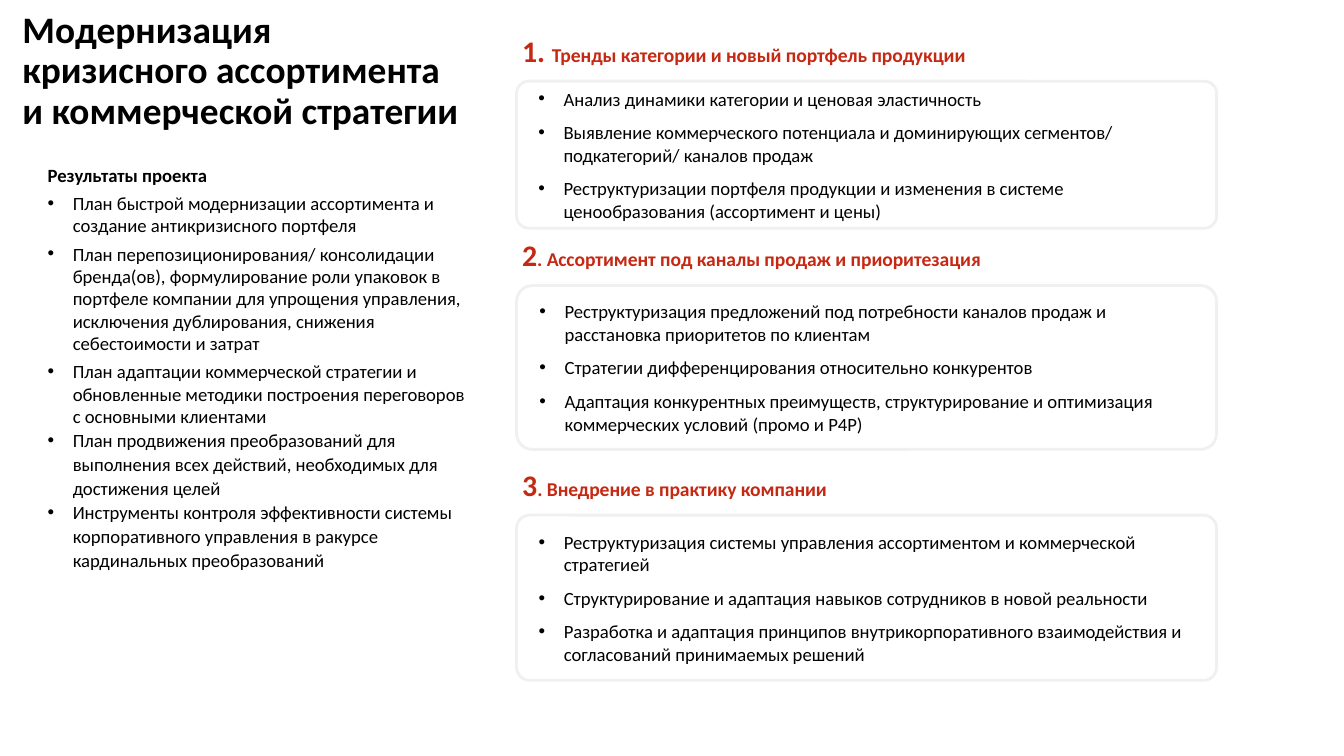
from pptx import Presentation
from pptx import util as u
from pptx.dml.color import RGBColor
from pptx.enum import shapes, text
from pptx.oxml import parse_xml
from pptx.oxml.ns import nsdecls

PX = 9525
HUES = {"ink": "000000", "red": "C52813", "edge": "F1F0F0", "back": "FFFFFF"}

GOALS = [
    "План быстрой модернизации ассортимента и создание антикризисного портфеля",
    "План перепозиционирования/ консолидации бренда(ов), формулирование роли упаковок "
    "в портфеле компании для упрощения управления, исключения дублирования, "
    "снижения себестоимости и затрат",
    "План адаптации коммерческой стратегии и обновленные методики построения "
    "переговоров с основными клиентами",
]
TOOLS = [
    "План продвижения преобразований для выполнения всех действий, "
    "необходимых для достижения целей",
    "Инструменты контроля эффективности системы корпоративного управления "
    "в ракурсе кардинальных преобразований",
]
STAGES = [
    ((369, 58, 500, 105), 527, 0.083, "1. ", "Тренды категории и новый портфель продукции", [
        "Анализ динамики категории и ценовая эластичность",
        "Выявление коммерческого потенциала и доминирующих сегментов/ "
        "подкатегорий/ каналов продаж",
        "Реструктуризации портфеля продукции и изменения в системе "
        "ценообразования (ассортимент и цены)",
    ]),
    ((369, 204, 500, 117), 502, 0.096, "2", ". Ассортимент под каналы продаж и приоритезация", [
        "Реструктуризация предложений под потребности каналов продаж и "
        "расстановка приоритетов по клиентам",
        "Стратегии дифференцирования относительно конкурентов",
        "Адаптация конкурентных преимуществ, структурирование и оптимизация "
        "коммерческих условий (промо и P4P)",
    ]),
    ((369, 368, 500, 118), 560, 0.079, "3", ". Внедрение в практику компании", [
        "Реструктуризация системы управления ассортиментом и коммерческой стратегией",
        "Структурирование и адаптация навыков сотрудников в новой реальности",
        "Разработка и адаптация принципов внутрикорпоративного взаимодействия "
        "и согласований принимаемых решений",
    ]),
]


def scale(box):
    return [n * PX for n in box]


def hue(name):
    return RGBColor.from_string(HUES[name])


def setup(frame, side=0, edge=0):
    frame.word_wrap = True
    frame.margin_left = frame.margin_right = side * PX
    frame.margin_top = frame.margin_bottom = edge * PX
    return frame


def panel(slide, box, pad=0):
    return setup(slide.shapes.add_textbox(*scale(box)).text_frame, pad, pad)


def write(frame, *runs, color="ink", bold=False, bullet=0, before=0, after=0, line=None):
    first = not frame.paragraphs[0].runs
    para = frame.paragraphs[0] if first else frame.add_paragraph()
    para.alignment = text.PP_ALIGN.LEFT
    para.space_before = u.Pt(0 if first else before)
    para.space_after = u.Pt(after)
    if line:
        para.line_spacing = line
    if bullet:
        props = para._p.get_or_add_pPr()
        props.set("marL", str(bullet * PX))
        props.set("indent", str(-18 * PX))
        props.append(parse_xml(f'<a:buFont {nsdecls("a")} typeface="Arial"/>'))
        props.append(parse_xml(f'<a:buChar {nsdecls("a")} char="•"/>'))
    for words, size in runs:
        for i, part in enumerate(words.split("\n")):
            if i:
                para.add_line_break()
            run = para.add_run()
            run.text = part
            font = run.font
            font.name, font.size, font.bold = "Calibri", u.Pt(size), bold
            font.color.rgb = hue(color)


def title(slide, box):
    frame = panel(slide, box)
    for words in ("Модернизация \nкризисного ассортимента", "и коммерческой стратегии"):
        write(frame, (words, 20), bold=True, line=0.9)


def results(slide, box):
    frame = panel(slide, box)
    write(frame, ("Результаты проекта", 10), bold=True)
    for words in GOALS:
        write(frame, (words, 10), bullet=18, before=3)
    for words in TOOLS:
        write(frame, (words, 10), bullet=18, line=1.07)


def stage(slide, box, span, curve, mark, head, items):
    left, top, _, _ = box
    card = slide.shapes.add_shape(shapes.MSO_SHAPE.ROUNDED_RECTANGLE, *scale(box))
    card.adjustments[0] = curve
    card.shadow.inherit = False
    card.fill.background()
    card.line.color.rgb = hue("edge")
    card.line.width = u.Pt(1.5)
    frame = setup(card.text_frame, 8, 10)
    frame.vertical_anchor = text.MSO_ANCHOR.MIDDLE
    for words in items:
        write(frame, (words, 10), bullet=23, before=3, after=3)
    label = panel(slide, (left - 6, top - 45, span, 45), 10)
    write(label, (mark, 16), (head, 10.5), color="red", bold=True)


def main():
    deck = Presentation()
    deck.slide_width, deck.slide_height = scale((960, 540))
    slide = deck.slides.add_slide(deck.slide_layouts[6])
    slide.background.fill.solid()
    slide.background.fill.fore_color.rgb = hue("back")
    results(slide, (34, 117, 303, 382))
    for row in STAGES:
        stage(slide, *row)
    title(slide, (16, 8, 321, 96))
    deck.save("out.pptx")


if __name__ == "__main__":
    main()
